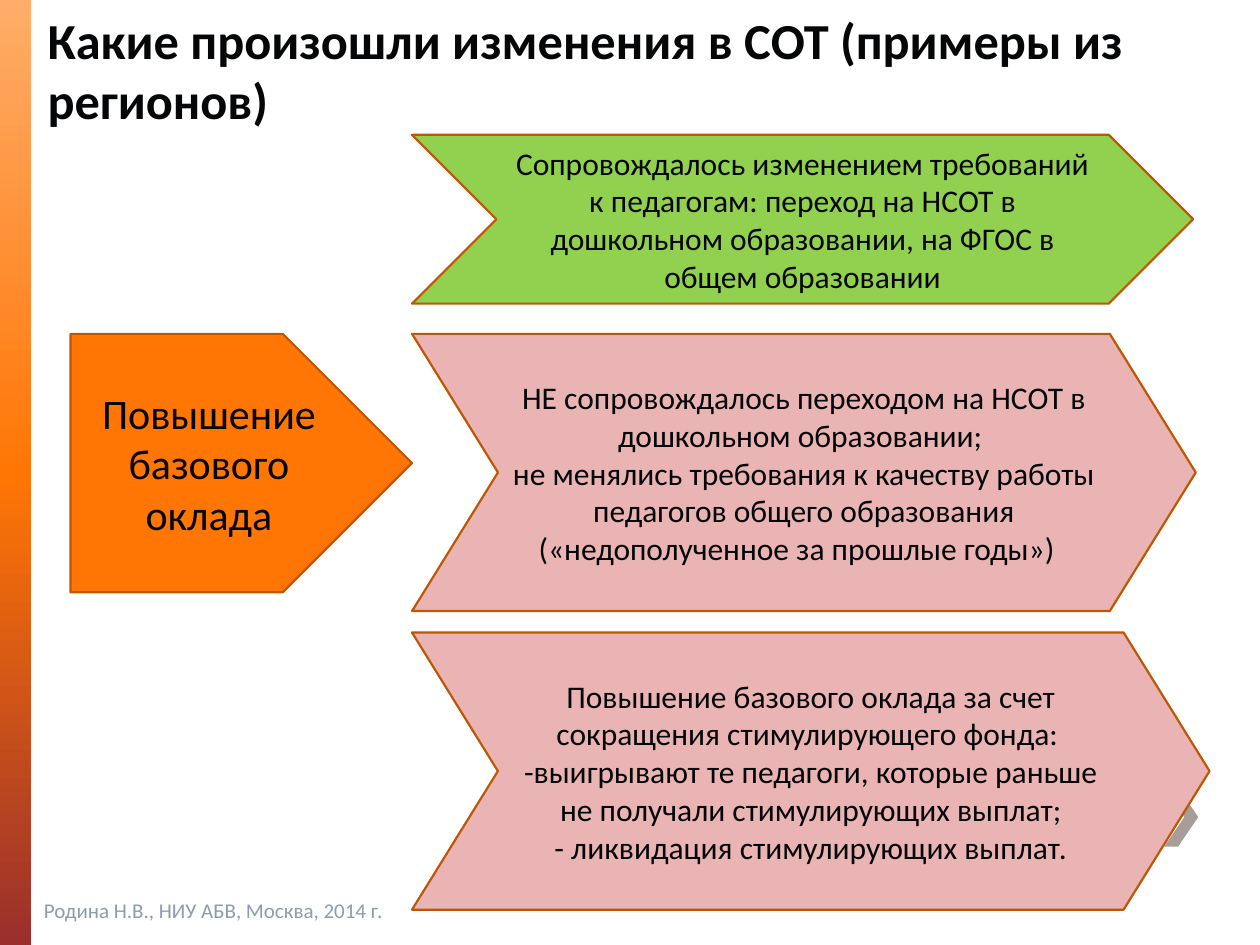
from copy import deepcopy
from dataclasses import dataclass

from pptx import Presentation
from pptx.dml.color import RGBColor
from pptx.enum.shapes import MSO_SHAPE
from pptx.enum.text import MSO_ANCHOR, PP_ALIGN
from pptx.util import Inches, Pt


@dataclass(frozen=True)
class Theme:
    font: str = "Calibri"
    ink: str = "050607"
    muted: str = "8D9CAD"
    outline: str = "BD5704"
    orange: str = "FF7605"
    green: str = "92D050"
    pink: str = "E9B4B3"
    ornament: str = "A79D99"
    bar_stops: tuple = ((0, "FFAD69"), (0.5, "FF7605"), (1, "9A2F2C"))
    title_size: float = 28.8
    cause_size: float = 24
    effect_size: float = 18
    footer_size: float = 12


THEME = Theme()

CAUSE = ["Повышение базового оклада"]
# box (left, top, width, height), point depth, colour, paragraphs
EFFECTS = [
    ((3.27, 1.07, 6.2, 1.34), 0.5, THEME.green, [
        "Сопровождалось изменением требований к педагогам: переход на НСОТ "
        "в дошкольном образовании, на ФГОС в общем образовании"]),
    ((3.27, 2.65, 6.22, 2.2), 0.31, THEME.pink, [
        "НЕ сопровождалось переходом на НСОТ в дошкольном образовании; ",
        "не менялись требования к качеству работы педагогов общего образования "
        "(«недополученное за прошлые годы»)  "]),
    ((3.27, 5.02, 6.33, 2.2), 0.31, THEME.pink, [
        "Повышение базового оклада за счет сокращения стимулирующего фонда: ",
        "-выигрывают те педагоги, которые раньше не получали стимулирующих выплат;",
        "- ликвидация стимулирующих выплат."]),
]


def inches(box):
    return [Inches(length) for length in box]


def write(frame, lines, size, color=THEME.ink, align=PP_ALIGN.LEFT,
          anchor=MSO_ANCHOR.MIDDLE, bold=False):
    frame.word_wrap = True
    frame.vertical_anchor = anchor
    for index, line in enumerate(lines):
        para = frame.add_paragraph() if index else frame.paragraphs[0]
        para.text = line
        para.alignment = align
        para.font.name = THEME.font
        para.font.size = Pt(size)
        para.font.bold = bold
        para.font.color.rgb = RGBColor.from_string(color)


def add_label(page, box, text, size, **style):
    write(page.shapes.add_textbox(*inches(box)).text_frame, [text], size, **style)


def add_arrow(page, box, kind, depth, color, lines, size):
    arrow = page.shapes.add_shape(kind, *inches(box))
    arrow.adjustments[0] = depth
    arrow.shadow.inherit = False
    arrow.fill.solid()
    arrow.fill.fore_color.rgb = RGBColor.from_string(color)
    arrow.line.color.rgb = RGBColor.from_string(THEME.outline)
    arrow.line.width = Pt(1.25)
    write(arrow.text_frame, lines, size, align=PP_ALIGN.CENTER)


def add_side_bar(page, box):
    """Bar with a three-stop gradient running from top to bottom."""
    bar = page.shapes.add_shape(MSO_SHAPE.RECTANGLE, *inches(box))
    bar.shadow.inherit = False
    bar.line.fill.background()
    bar.fill.gradient()
    bar.fill.gradient_angle = 270
    first = bar.fill.gradient_stops[0]._gs
    first.addnext(deepcopy(first))
    for stop, (position, color) in zip(bar.fill.gradient_stops, THEME.bar_stops):
        stop.position = position
        stop.color.rgb = RGBColor.from_string(color)


def add_ornament(page, box):
    """Small grey angle bracket pointing right."""
    left, top, width, height = box
    right, middle, bottom = left + width, top + height / 2, top + height
    stroke = 0.11
    points = [(left + stroke, top), (left, top), (right - stroke, middle),
              (left, bottom), (left + stroke, bottom), (right, middle)]
    start, *rest = [tuple(inches(point)) for point in points]
    builder = page.shapes.build_freeform(*start)
    builder.add_line_segments(rest, close=True)
    bracket = builder.convert_to_shape()
    bracket.shadow.inherit = False
    bracket.fill.solid()
    bracket.fill.fore_color.rgb = RGBColor.from_string(THEME.ornament)
    bracket.line.fill.background()


def main():
    deck = Presentation()
    deck.slide_width, deck.slide_height = Inches(10), Inches(7.5)
    page = deck.slides.add_slide(deck.slide_layouts[6])

    add_side_bar(page, (0, 0, 0.25, 7.5))
    add_ornament(page, (9.24, 6.25, 0.27, 0.47))
    add_arrow(page, (0.56, 2.65, 2.71, 2.05), MSO_SHAPE.PENTAGON, 0.5,
              THEME.orange, CAUSE, THEME.cause_size)
    for box, depth, color, lines in EFFECTS:
        add_arrow(page, box, MSO_SHAPE.CHEVRON, depth, color, lines,
                  THEME.effect_size)
    add_label(page, (0.25, 7.02, 4.98, 0.4), "Родина Н.В., НИУ АБВ, Москва, 2014 г.",
              THEME.footer_size, color=THEME.muted)
    add_label(page, (0.28, 0.21, 9.29, 0.87),
              "Какие произошли изменения в СОТ (примеры из регионов)",
              THEME.title_size, anchor=MSO_ANCHOR.BOTTOM, bold=True)

    deck.save("out.pptx")


if __name__ == "__main__":
    main()
